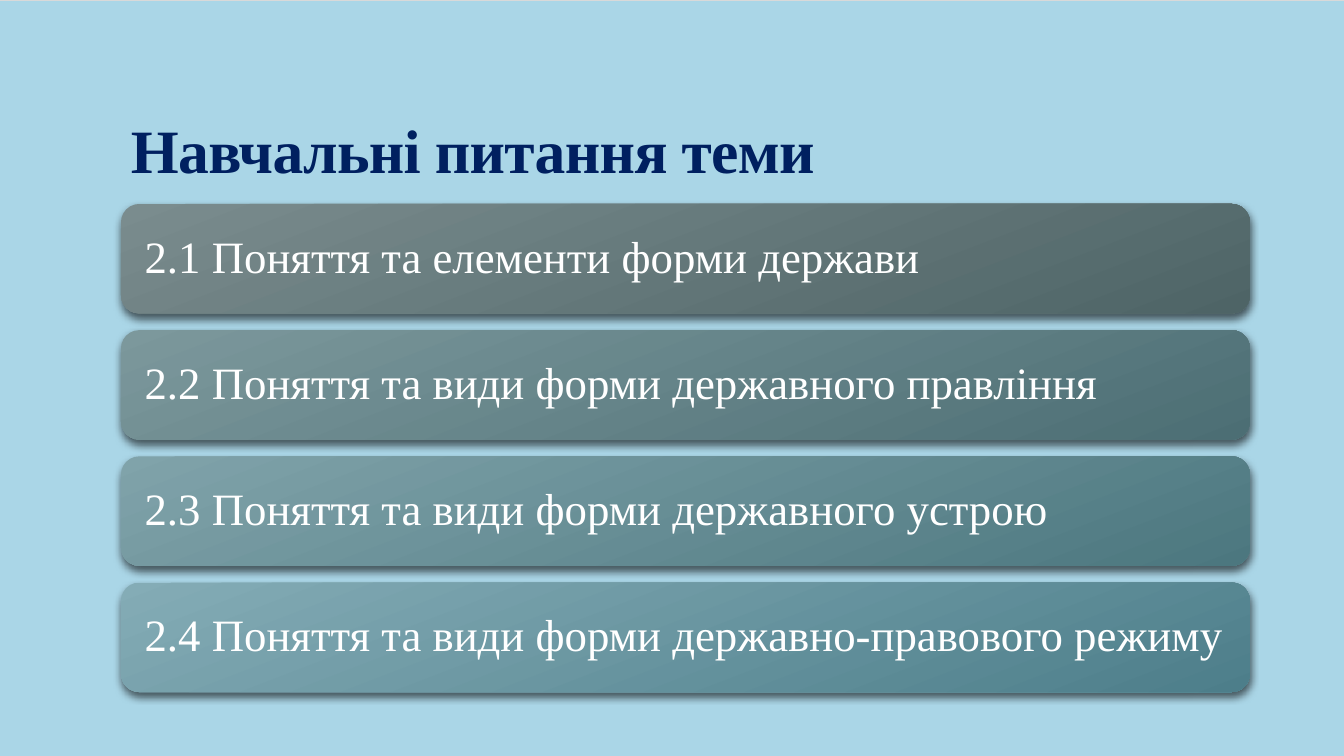
import pptx
import pptx.dml.color
import pptx.enum.dml
import pptx.enum.shapes
import pptx.enum.text
import pptx.oxml.ns
import pptx.util
from dataclasses import dataclass
from lxml import etree
from pptx.util import Cm, Pt


@dataclass(frozen=True)
class Theme:
    font: str = "Times New Roman"
    background: str = "AAD6E7"
    pattern_back: str = "D9D9D9"
    title: str = "002060"
    text: str = "FFFFFF"
    shadow: str = "000000"
    title_size: int = 44
    question_size: int = 32


theme = Theme()
rgb = pptx.dml.color.RGBColor.from_string
qn = pptx.oxml.ns.qn


def style_paragraph(paragraph, size, color, line_spacing):
    paragraph.alignment = pptx.enum.text.PP_ALIGN.LEFT
    paragraph.line_spacing = line_spacing
    paragraph.font.name = theme.font
    paragraph.font.size = Pt(size)
    paragraph.font.color.rgb = rgb(color)


def add_soft_shadow(shape):
    shape.shadow.inherit = False
    effects = shape.element.spPr.find(qn("a:effectLst"))
    shadow = etree.SubElement(
        effects, qn("a:outerShdw"), blurRad=str(Pt(6)), dist=str(Pt(3)),
        dir="5400000", algn="ctr", rotWithShape="0")
    color = etree.SubElement(shadow, qn("a:srgbClr"), val=theme.shadow)
    etree.SubElement(color, qn("a:alpha"), val="60000")


presentation = pptx.Presentation()
presentation.slide_width = Cm(33.87)
presentation.slide_height = Cm(19.05)
slide = presentation.slides.add_slide(presentation.slide_layouts[6])

background = slide.background.fill
background.patterned()
background.pattern = pptx.enum.dml.MSO_PATTERN.DARK_HORIZONTAL
background.fore_color.rgb = rgb(theme.background)
background.back_color.rgb = rgb(theme.pattern_back)

title = slide.shapes.add_textbox(Cm(3.05), Cm(0.78), Cm(27.94), Cm(4.03))
title.text_frame.word_wrap = True
title.text_frame.vertical_anchor = pptx.enum.text.MSO_ANCHOR.BOTTOM
title.text_frame.text = "Навчальні питання теми"
heading = title.text_frame.paragraphs[0]
style_paragraph(heading, theme.title_size, theme.title, 0.85)
heading.font.bold = True
title.element.find(".//" + qn("a:defRPr")).set("spc", "-50")

questions = [
    ("2.1 Поняття та елементи форми держави", "7A8C8E", "4E6466"),
    ("2.2 Поняття та види форми державного правління", "7C989C", "4C6E74"),
    ("2.3 Поняття та види форми державного устрою", "80A3AA", "4C777F"),
    ("2.4 Поняття та види форми державно-правового режиму", "84ACB6", "4D7E8A"),
]
bar_left, bar_top, bar_pitch = 3.05, 5.14, 3.18
bar_width, bar_height = 28.45, 2.76

for index, (question, start_color, end_color) in enumerate(questions):
    bar = slide.shapes.add_shape(
        pptx.enum.shapes.MSO_SHAPE.ROUNDED_RECTANGLE,
        Cm(bar_left), Cm(bar_top + index * bar_pitch), Cm(bar_width), Cm(bar_height))
    bar.fill.gradient()
    bar.fill.gradient_angle = 360 - 69
    for stop, color, position in zip(bar.fill.gradient_stops, (start_color, end_color), (0, 1)):
        stop.color.rgb = rgb(color)
        stop.position = position
    bar.line.fill.background()
    add_soft_shadow(bar)

    frame = bar.text_frame
    frame.word_wrap = True
    frame.vertical_anchor = pptx.enum.text.MSO_ANCHOR.MIDDLE
    frame.margin_left = frame.margin_right = Cm(0.46)
    frame.margin_top = frame.margin_bottom = Cm(0.46)
    frame.text = question
    style_paragraph(frame.paragraphs[0], theme.question_size, theme.text, 0.9)

presentation.save("out.pptx")
